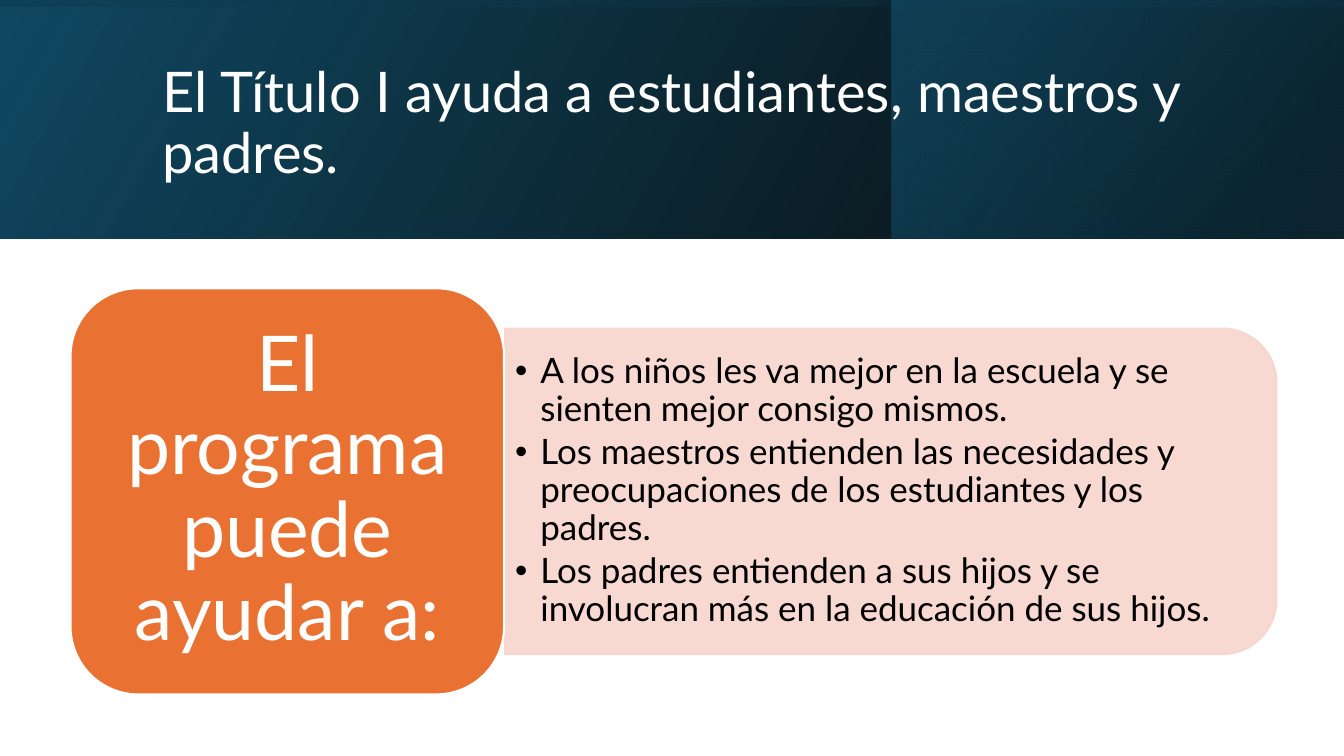
from lxml import etree
from pptx import Presentation
from pptx import util as u
from pptx.dml.color import RGBColor
from pptx.enum import shapes, text
from pptx.oxml.ns import qn

FONT = "Lato"
TITLE = "El Título I ayuda a estudiantes, maestros y padres."
LABEL = "El programa puede ayudar a:"
BENEFITS = [
    "A los niños les va mejor en la escuela y se sienten mejor consigo mismos.",
    "Los maestros entienden las necesidades y preocupaciones de los estudiantes y los padres.",
    "Los padres entienden a sus hijos y se involucran más en la educación de sus hijos.",
]
SLIDE_W, SLIDE_H, BAND_H = 13.33, 7.5, 2.37
MID = (SLIDE_W - BAND_H) / 2
# box, rotation, gradient angle, stops (position %, colour, opacity %)
BANDS = [
    ((0, 0, SLIDE_W, BAND_H), 0, 330, [(0, "000000", 96), (100, "104862", 100)]),
    ((8.84, 0, SLIDE_W - 8.84, BAND_H), 0, 320, [(19, "0B3041", 68), (100, "156082", 48)]),
    ((MID, -MID, BAND_H, SLIDE_W), 270, 350, [(23, "104862", 16), (99, "000000", 45)]),
]
KIND = shapes.MSO_SHAPE


def rgb(value):
    return RGBColor.from_string(value)


def place(sp, box):
    sp.left, sp.top, sp.width, sp.height = map(u.Inches, box)


def add_shape(kind, box, rotation=0):
    sp = slide.shapes.add_shape(kind, *map(u.Inches, box))
    sp.rotation = rotation
    sp.shadow.inherit = False
    return sp


def add_alpha(fill_element, percent):
    color = fill_element.find(qn("a:srgbClr"))
    etree.SubElement(color, qn("a:alpha"), val=str(percent * 1000))


def add_band(box, rotation, angle, stops):
    """Add a mirrored rectangle with a translucent gradient and no outline."""
    sp = add_shape(KIND.RECTANGLE, box, rotation)
    sp.line.fill.background()
    spPr = sp._element.spPr
    spPr.find(qn("a:xfrm")).set("flipH", "1")
    grad = etree.Element(qn("a:gradFill"), rotWithShape="1")
    stop_list = etree.SubElement(grad, qn("a:gsLst"))
    for pos, color, opacity in stops:
        stop = etree.SubElement(stop_list, qn("a:gs"), pos=str(pos * 1000))
        etree.SubElement(stop, qn("a:srgbClr"), val=color)
        add_alpha(stop, opacity)
    etree.SubElement(grad, qn("a:lin"), ang=str(angle * 60000), scaled="0")
    spPr.find(qn("a:prstGeom")).addnext(grad)


def write(sp, lines, size, color, align, insets=(0.1, 0.05)):
    tf = sp.text_frame
    tf.text = "\n".join(lines)
    tf.word_wrap = True
    tf.auto_size = text.MSO_AUTO_SIZE.NONE
    tf.vertical_anchor = text.MSO_ANCHOR.MIDDLE
    tf.margin_left = tf.margin_right = u.Inches(insets[0])
    tf.margin_top = tf.margin_bottom = u.Inches(insets[1])
    for p in tf.paragraphs:
        p.alignment = align
        p.line_spacing = 0.9
        p.space_before = u.Pt(0)
        for r in p.runs:
            r.font.name, r.font.size = FONT, u.Pt(size)
            r.font.color.rgb = rgb(color)
    return tf


prs = Presentation()
prs.slide_width, prs.slide_height = u.Inches(SLIDE_W), u.Inches(SLIDE_H)
slide = prs.slides.add_slide(prs.slide_layouts[1])
title, body = slide.placeholders
tree = slide.shapes._spTree

for band in BANDS:
    add_band(*band)

place(title, (1.51, 0.38, 10.63, 1.72))
write(title, [TITLE], 40, "FFFFFF", text.PP_ALIGN.LEFT)
tree.append(title._element)

panel = add_shape(KIND.ROUND_2_SAME_RECTANGLE, (7.22, 1.05, 3.23, 7.65), 90)
panel.fill.solid()
panel.fill.fore_color.rgb = panel.line.color.rgb = rgb("F7D5CE")
panel.line.width = u.Pt(1.5)
for fill in list(panel._element.spPr.iter(qn("a:solidFill"))):
    add_alpha(fill, 90)

place(body, (5.01, 3.42, 7.49, 2.91))
tf = write(body, BENEFITS, 25, "000000", text.PP_ALIGN.LEFT)
for p in tf.paragraphs:
    p.space_after = u.Pt(4)
    pPr = p._p.get_or_add_pPr()
    pPr.set("marL", str(u.Inches(0.25)))
    pPr.set("indent", str(-u.Inches(0.25)))
    etree.SubElement(pPr, qn("a:buChar"), char="•")
tree.append(body._element)

label = add_shape(KIND.ROUNDED_RECTANGLE, (0.7, 2.86, 4.3, 4.03))
label.fill.solid()
label.fill.fore_color.rgb = rgb("E97132")
label.line.color.rgb = rgb("FFFFFF")
label.line.width = u.Pt(1.5)
write(label, [LABEL], 55, "FFFFFF", text.PP_ALIGN.CENTER, (0.23, 0.11))

prs.save("out.pptx")
